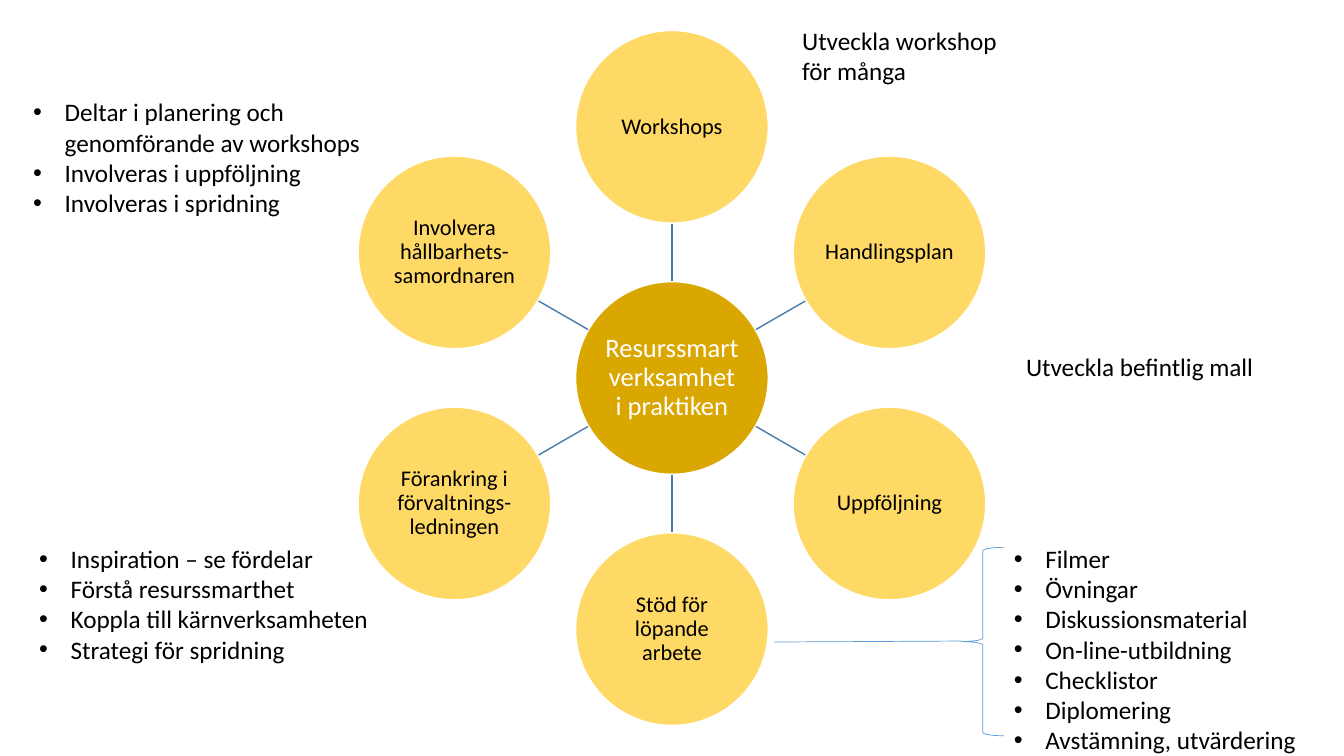
import math
from dataclasses import dataclass

import pptx
import pptx.dml.color
import pptx.enum.shapes
import pptx.enum.text
import pptx.util
from lxml import etree

Pt = pptx.util.Pt
Shape = pptx.enum.shapes.MSO_SHAPE
Align = pptx.enum.text.PP_ALIGN
Anchor = pptx.enum.text.MSO_ANCHOR
Fit = pptx.enum.text.MSO_AUTO_SIZE
NS = "http://schemas.openxmlformats.org/drawingml/2006/main"

MID_X, MID_Y = 480, 270
SIZE = 137.6
ORBIT = 179.4
INNER, OUTER = 69.2, 110.3
BLUE = "5B9BD5"


@dataclass
class Note:
    left: float
    top: float
    width: float
    height: float
    lines: list[str]
    dots: bool = True


TOPICS = [
    "Workshops",
    "Handlingsplan",
    "Uppföljning",
    "Stöd för löpande arbete",
    "Förankring i förvaltnings-ledningen",
    "Involvera hållbarhets-samordnaren",
]

NOTES = [
    Note(565.9, 14.4, 168.5, 51.1, ["Utveckla workshop för många"], dots=False),
    Note(725.8, 247.7, 187.9, 28.8, ["Utveckla befintlig mall"], dots=False),
    Note(717.1, 384.5, 319.7, 159.8, [
        "Filmer", "Övningar", "Diskussionsmaterial", "On-line-utbildning",
        "Checklistor", "Diplomering", "Avstämning, utvärdering"]),
    Note(20.9, 384.5, 429.8, 94.3, [
        "Inspiration – se fördelar", "Förstå resurssmarthet",
        "Koppla till kärnverksamheten", "Strategi för spridning"]),
    Note(16.6, 65.5, 256.3, 94.3, [
        "Deltar i planering och genomförande av workshops",
        "Involveras i uppföljning", "Involveras i spridning"]),
]


def tint(code: str) -> pptx.dml.color.RGBColor:
    return pptx.dml.color.RGBColor.from_string(code)


def write(para, text: str, size: float = 18, color: str = "000000",
          align=Align.LEFT, space: float = 1, dot: bool = False) -> None:
    run = para.add_run()
    run.text = text
    run.font.name, run.font.size = "Calibri", Pt(size)
    run.font.color.rgb = tint(color)
    para.alignment, para.line_spacing = align, space
    if dot:
        props = para._p.get_or_add_pPr()
        props.set("marL", str(Pt(22.5)))
        props.set("indent", str(-Pt(22.5)))
        etree.SubElement(props, f"{{{NS}}}buFont", typeface="Arial")
        etree.SubElement(props, f"{{{NS}}}buChar", char="•")


def disc(slide, x: float, y: float, text: str, fill: str, **style) -> None:
    oval = slide.shapes.add_shape(
        Shape.OVAL, Pt(x - SIZE / 2), Pt(y - SIZE / 2), Pt(SIZE), Pt(SIZE))
    oval.shadow.inherit = False
    oval.fill.solid()
    oval.fill.fore_color.rgb = tint(fill)
    oval.line.color.rgb, oval.line.width = tint("FFFFFF"), Pt(1)
    frame = oval.text_frame
    frame.word_wrap, frame.vertical_anchor = True, Anchor.MIDDLE
    frame.margin_left = frame.margin_right = Pt(0.7)
    frame.margin_top = frame.margin_bottom = Pt(0.7)
    write(frame.paragraphs[0], text, align=Align.CENTER, space=0.9, **style)


def rule(slide, start: tuple[float, float], end: tuple[float, float],
         color: str, width: float) -> None:
    line = slide.shapes.add_connector(
        pptx.enum.shapes.MSO_CONNECTOR.STRAIGHT,
        *(Pt(value) for value in (*start, *end)))
    line.line.color.rgb, line.line.width = tint(color), Pt(width)
    etree.SubElement(line._element.spPr, f"{{{NS}}}effectLst")


def label(slide, note: Note) -> None:
    box = slide.shapes.add_textbox(
        Pt(note.left), Pt(note.top), Pt(note.width), Pt(note.height))
    frame = box.text_frame
    frame.word_wrap, frame.auto_size = True, Fit.SHAPE_TO_FIT_TEXT
    for index, text in enumerate(note.lines):
        para = frame.add_paragraph() if index else frame.paragraphs[0]
        write(para, text, dot=note.dots)


def polar(angle: float, reach: float) -> tuple[float, float]:
    return MID_X + reach * math.sin(angle), MID_Y - reach * math.cos(angle)


def main() -> None:
    deck = pptx.Presentation()
    deck.slide_width, deck.slide_height = Pt(960), Pt(540)
    slide = deck.slides.add_slide(deck.slide_layouts[6])

    # Hub with topics around it, clockwise from the top
    disc(slide, MID_X, MID_Y, "Resurssmart verksamhet i praktiken",
         "DAA600", size=19, color="FFFFFF")
    for index, topic in enumerate(TOPICS):
        angle = math.tau * index / len(TOPICS)
        rule(slide, polar(angle, INNER), polar(angle, OUTER), "497CAB", 1)
        disc(slide, *polar(angle, ORBIT), topic, "FFD966", size=16)

    # Notes beside the topics
    for note in NOTES:
        label(slide, note)

    # Brace that ties the support list to its topic
    brace = slide.shapes.add_shape(
        Shape.LEFT_BRACE, Pt(686.9), Pt(391), Pt(30.2), Pt(134.6))
    brace.shadow.inherit = False
    brace.fill.background()
    brace.line.color.rgb, brace.line.width = tint(BLUE), Pt(0.5)
    rule(slide, (553, 458.6), (686.9, 457.9), BLUE, 0.5)

    deck.save("out.pptx")


if __name__ == "__main__":
    main()
